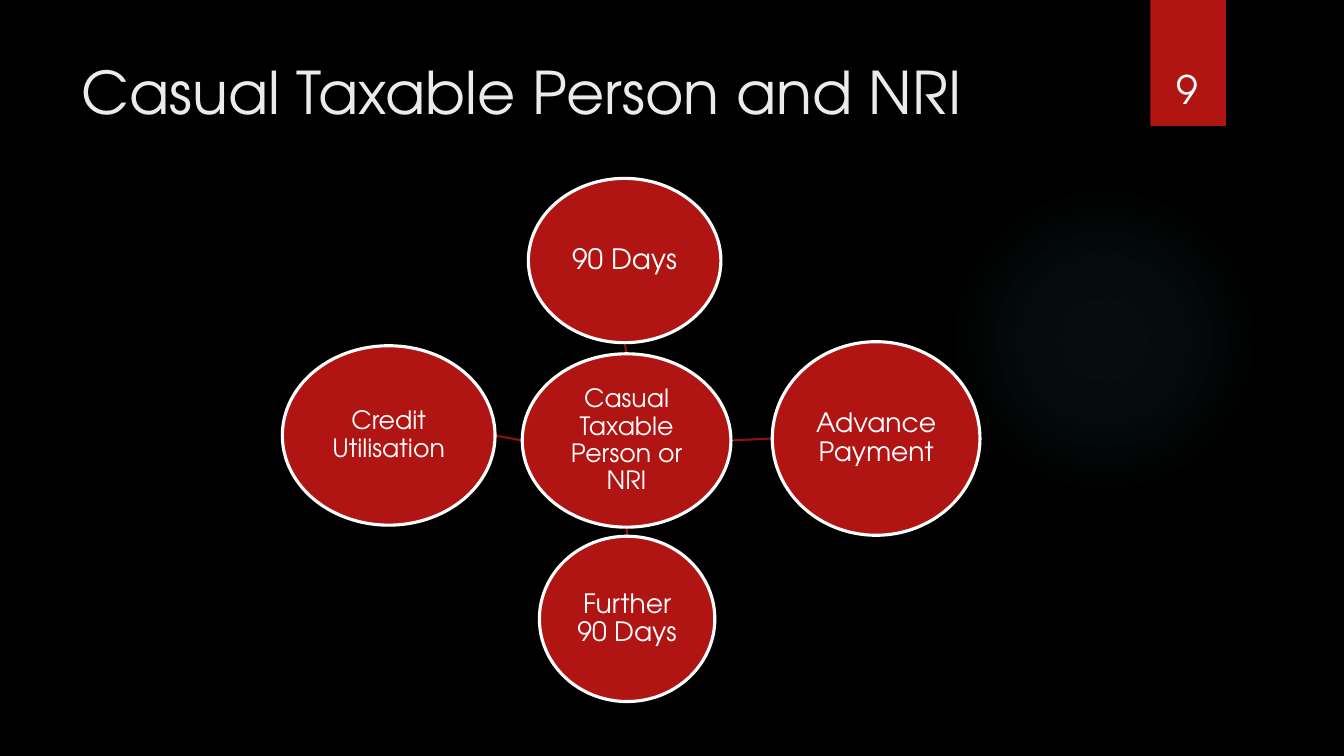
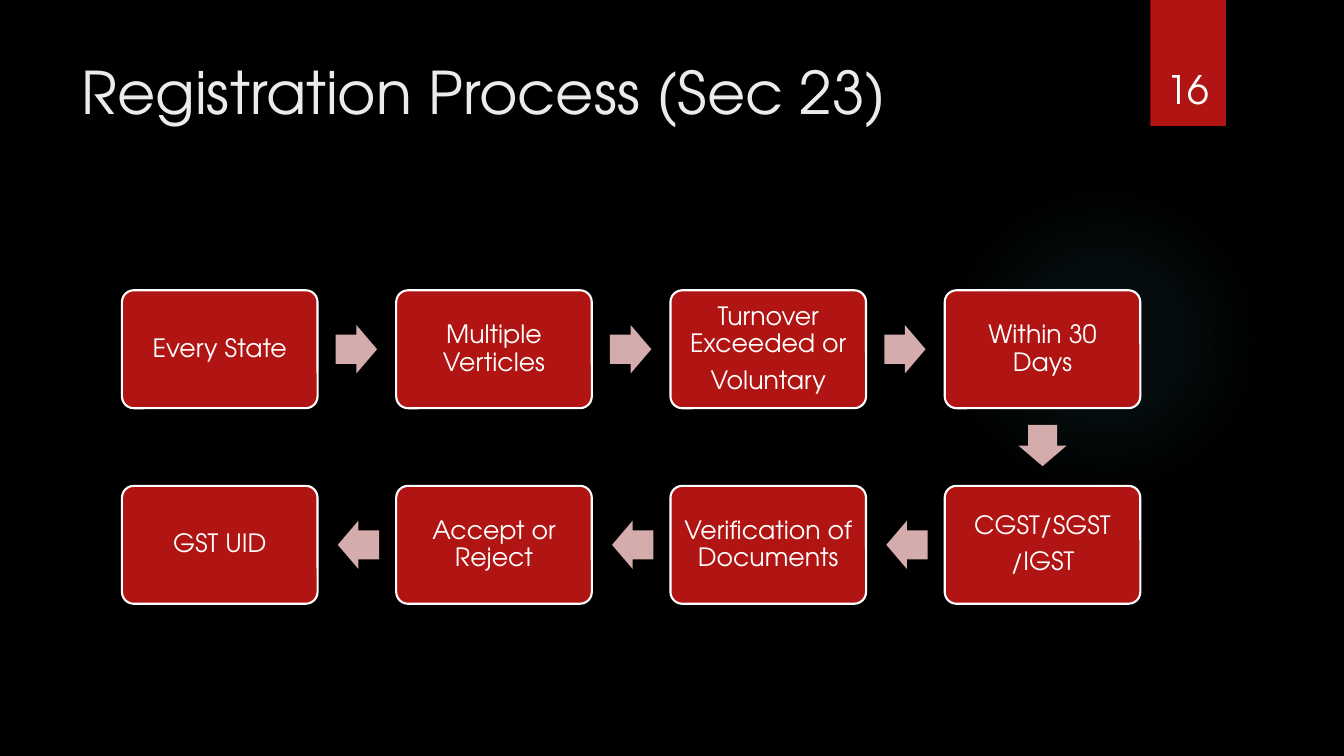
"""Build two dark slides: a hub of circles and a two-row process."""
from dataclasses import dataclass

from pptx import Presentation
from pptx.dml.color import RGBColor as Rgb
from pptx.enum.shapes import MSO_CONNECTOR as Link, MSO_SHAPE as Kind
from pptx.enum.text import MSO_ANCHOR as Anchor, PP_ALIGN as Align
from pptx.oxml import parse_xml
from pptx.oxml.ns import nsdecls, qn
from pptx.shapes.autoshape import Shape
from pptx.slide import Slide
from pptx.text.text import TextFrame
from pptx.util import Inches, Pt


@dataclass(frozen=True)
class Theme:
    font: str = "TeX Gyre Adventor"
    back: str = "000000"
    red: str = "B01513"
    dark: str = "8D110F"
    pink: str = "D4ACAB"
    white: str = "FFFFFF"
    pale: str = "EBEBEB"
    glow: str = "50B9C1"
    title: int = 42
    page: int = 28
    body: int = 18


@dataclass(frozen=True)
class Box:
    x: float
    y: float
    w: float
    h: float

    def lengths(self) -> tuple:
        return Inches(self.x), Inches(self.y), Inches(self.w), Inches(self.h)

    def side(self, name: str) -> tuple:
        mid_x, mid_y = self.x + self.w / 2, self.y + self.h / 2
        spots = {
            "top": (mid_x, self.y),
            "left": (self.x, mid_y),
            "bottom": (mid_x, self.y + self.h),
            "right": (self.x + self.w, mid_y),
        }
        x, y = spots[name]
        return Inches(x), Inches(y)


@dataclass(frozen=True)
class Ball:
    text: str
    box: Box
    size: int
    near: str = ""
    far: str = ""


THEME = Theme()

HUB = Ball("Casual Taxable Person or NRI", Box(5.18, 3.51, 2.07, 1.72), 18)
BALLS = (
    Ball("90 Days", Box(5.24, 1.77, 1.91, 1.63), 20, "top", "bottom"),
    Ball("Advance Payment", Box(7.66, 3.39, 2.06, 1.92), 19, "right", "left"),
    Ball("Further 90 Days", Box(5.35, 5.32, 1.74, 1.64), 19, "bottom", "top"),
    Ball("Credit Utilisation", Box(2.8, 3.43, 2.11, 1.78), 18, "left", "right"),
)

STEPS = (
    ("Every State",),
    ("Multiple Verticles",),
    ("Turnover Exceeded or", "Voluntary"),
    ("Within 30 Days",),
    ("CGST/SGST", "/IGST"),
    ("Verification of Documents",),
    ("Accept or Reject",),
    ("GST UID",),
)
COLS = 4
LEFT, TOP = 1.21, 2.88
STEP_X, STEP_Y = 2.72, 1.94
CARD_W, CARD_H = 1.94, 1.17
ARROW_W, ARROW_H = 0.41, 0.48


def write(frame: TextFrame, lines: tuple, size: int, color: str,
          align: Align, anchor: Anchor) -> None:
    frame.word_wrap = True
    frame.vertical_anchor = anchor
    for num, line in enumerate(lines):
        para = frame.paragraphs[0] if num == 0 else frame.add_paragraph()
        para.alignment = align
        run = para.add_run()
        run.text = line
        run.font.name = THEME.font
        run.font.size = Pt(size)
        run.font.color.rgb = Rgb.from_string(color)


def label(slide: Slide, box: Box, text: str, size: int, color: str,
          align: Align, anchor: Anchor) -> None:
    frame = slide.shapes.add_textbox(*box.lengths()).text_frame
    write(frame, (text,), size, color, align, anchor)


def shape(slide: Slide, kind: Kind, box: Box, fill: str,
          edge: float = 0) -> Shape:
    item = slide.shapes.add_shape(kind, *box.lengths())
    item.shadow.inherit = False
    item.fill.solid()
    item.fill.fore_color.rgb = Rgb.from_string(fill)
    if edge:
        item.line.color.rgb = Rgb.from_string(THEME.white)
        item.line.width = Pt(edge)
    else:
        item.line.fill.background()
    return item


def node(slide: Slide, kind: Kind, box: Box, lines: tuple, size: int,
         edge: float, inset: float) -> Shape:
    item = shape(slide, kind, box, THEME.red, edge)
    frame = item.text_frame
    frame.margin_left = frame.margin_right = Inches(inset)
    frame.margin_top = frame.margin_bottom = Inches(inset)
    write(frame, lines, size, THEME.white, Align.CENTER, Anchor.MIDDLE)
    for para in frame.paragraphs:
        para.line_spacing = 0.9
        para.space_after = Pt(size * 0.35)
    return item


def glow(slide: Slide) -> None:
    item = shape(slide, Kind.OVAL, Box(9.41, 1.83, 3.08, 3.08), THEME.glow)
    stops = "".join(
        f'<a:gs pos="{pos * 1000}"><a:srgbClr val="{THEME.glow}">'
        f'<a:alpha val="{alpha * 1000}"/></a:srgbClr></a:gs>'
        for pos, alpha in ((0, 7), (36, 6), (69, 0), (100, 0))
    )
    grad = parse_xml(
        f'<a:gradFill {nsdecls("a")}><a:gsLst>{stops}</a:gsLst>'
        '<a:path path="circle"><a:fillToRect l="50000" t="50000" '
        'r="50000" b="50000"/></a:path></a:gradFill>'
    )
    props = item._element.spPr
    props.replace(props.find(qn("a:solidFill")), grad)


def start(deck: Presentation, title: str, page: int) -> Slide:
    slide = deck.slides.add_slide(deck.slide_layouts[6])
    fill = slide.background.fill
    fill.solid()
    fill.fore_color.rgb = Rgb.from_string(THEME.back)
    glow(slide)
    shape(slide, Kind.RECTANGLE, Box(11.41, 0, 0.75, 1.25), THEME.red)
    label(slide, Box(0.71, 0.5, 10.29, 1.53), title, THEME.title,
          THEME.pale, Align.LEFT, Anchor.TOP)
    label(slide, Box(11.32, 0.32, 0.92, 0.84), str(page), THEME.page,
          THEME.white, Align.CENTER, Anchor.BOTTOM)
    return slide


def spoke(slide: Slide, ball: Ball) -> None:
    line = slide.shapes.add_connector(
        Link.STRAIGHT, *HUB.box.side(ball.near), *ball.box.side(ball.far))
    line.line.color.rgb = Rgb.from_string(THEME.dark)
    line.line.width = Pt(1.5)
    line._element.spPr.append(parse_xml(f'<a:effectLst {nsdecls("a")}/>'))


def draw_hub(slide: Slide) -> None:
    for ball in BALLS:
        spoke(slide, ball)
    for ball in (HUB, *BALLS):
        node(slide, Kind.OVAL, ball.box, (ball.text,), ball.size, 2.25, 0.01)


def arrow(slide: Slide, x: float, y: float, turn: int) -> None:
    item = shape(slide, Kind.RIGHT_ARROW, Box(x, y, ARROW_W, ARROW_H),
                 THEME.pink)
    item.adjustments[0] = 0.6
    item.adjustments[1] = 0.5
    item.rotation = turn


def draw_flow(slide: Slide) -> None:
    for num, lines in enumerate(STEPS):
        row, col = divmod(num, COLS)
        if row:
            col = COLS - 1 - col
        x, y = LEFT + col * STEP_X, TOP + row * STEP_Y
        card = node(slide, Kind.ROUNDED_RECTANGLE, Box(x, y, CARD_W, CARD_H),
                    lines, THEME.body, 1.5, 0.07)
        card.adjustments[0] = 0.1
        mid = y + (CARD_H - ARROW_H) / 2
        if num == COLS - 1:
            arrow(slide, x + (CARD_W - ARROW_W) / 2, y + 1.3, 90)
        elif row == 0:
            arrow(slide, x + 2.12, mid, 0)
        elif col > 0:
            arrow(slide, x - 0.58, mid, 180)


def main() -> None:
    deck = Presentation()
    deck.slide_width, deck.slide_height = Inches(13.33), Inches(7.5)
    draw_hub(start(deck, "Casual Taxable Person and NRI", 9))
    draw_flow(start(deck, "Registration Process (Sec 23)", 16))
    deck.save("out.pptx")


if __name__ == "__main__":
    main()
